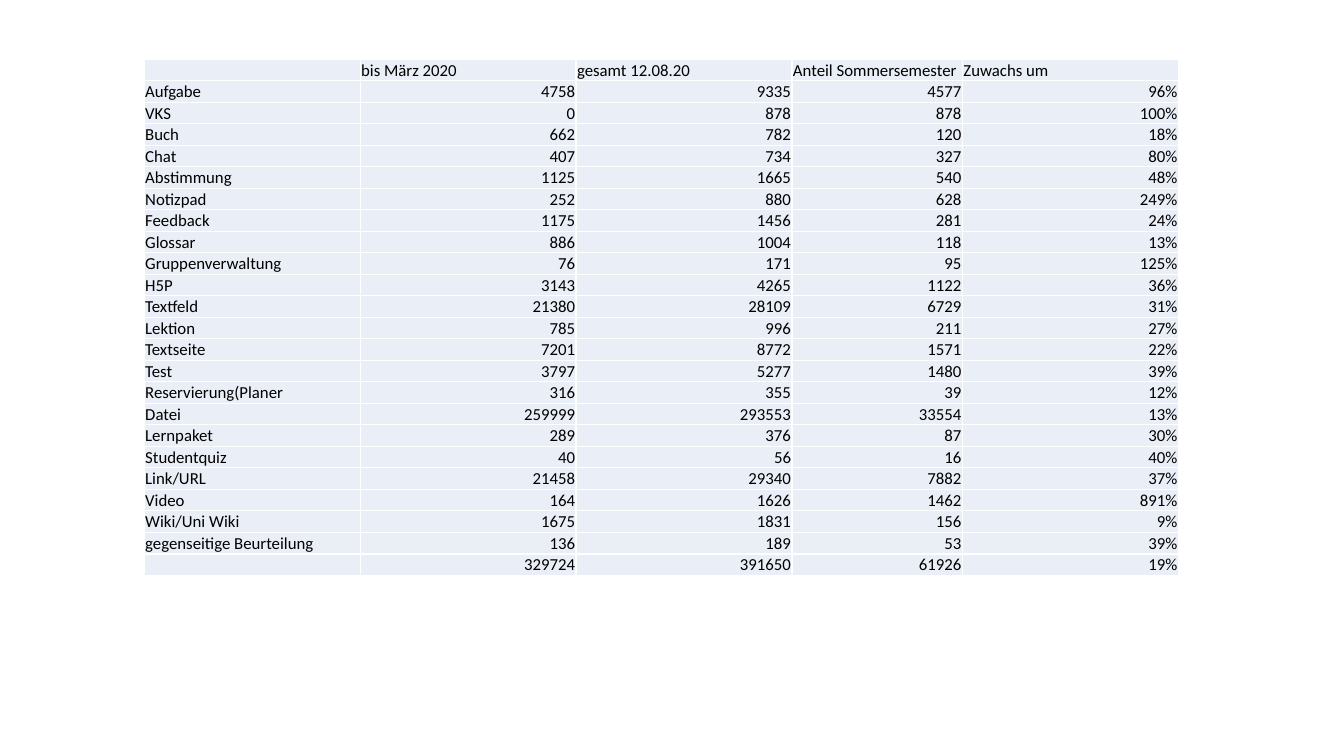
from typing import NamedTuple

from lxml import etree
from pptx import Presentation
from pptx import util as u
from pptx.dml.color import RGBColor
from pptx.enum import text
from pptx.oxml import ns
from pptx.table import _Cell

PALE = RGBColor(0xEA, 0xEF, 0xF7)
WHITE = RGBColor(0xFF, 0xFF, 0xFF)
BLACK = RGBColor(0, 0, 0)
FONT = "Calibri"
SIZE = 12
LEFT, TOP = 103, 42.3
WIDTHS = (154.25, 154.25, 154.25, 121.75, 154.25)
HEIGHT = 15.2
INSET = 0.72


class Usage(NamedTuple):
    name: str
    old: int
    total: int

    def texts(self) -> tuple[str, ...]:
        share = self.total - self.old
        growth = share / self.old if self.old else 1
        return self.name, str(self.old), str(self.total), str(share), f"{growth:.0%}"


HEADS = ("", "bis März 2020", "gesamt 12.08.20", "Anteil Sommersemester", "Zuwachs um")
TOOLS = [
    Usage("Aufgabe", 4758, 9335),
    Usage("VKS", 0, 878),
    Usage("Buch", 662, 782),
    Usage("Chat", 407, 734),
    Usage("Abstimmung", 1125, 1665),
    Usage("Notizpad", 252, 880),
    Usage("Feedback", 1175, 1456),
    Usage("Glossar", 886, 1004),
    Usage("Gruppenverwaltung", 76, 171),
    Usage("H5P", 3143, 4265),
    Usage("Textfeld", 21380, 28109),
    Usage("Lektion", 785, 996),
    Usage("Textseite", 7201, 8772),
    Usage("Test", 3797, 5277),
    Usage("Reservierung(Planer", 316, 355),
    Usage("Datei", 259999, 293553),
    Usage("Lernpaket", 289, 376),
    Usage("Studentquiz", 40, 56),
    Usage("Link/URL", 21458, 29340),
    Usage("Video", 164, 1626),
    Usage("Wiki/Uni Wiki", 1675, 1831),
    Usage("gegenseitige Beurteilung", 136, 189),
]
SUM = Usage("", sum(t.old for t in TOOLS), sum(t.total for t in TOOLS))


def add_edges(cell: _Cell, color: RGBColor, width: float) -> None:
    props = cell._tc.get_or_add_tcPr()
    for spot, side in enumerate(("lnL", "lnR", "lnT", "lnB")):
        line = etree.Element(ns.qn(f"a:{side}"), w=str(u.Pt(width)))
        fill = etree.SubElement(line, ns.qn("a:solidFill"))
        etree.SubElement(fill, ns.qn("a:srgbClr"), val=str(color))
        props.insert(spot, line)


def put_text(cell: _Cell, words: str, *, size: float = SIZE,
             color: RGBColor = BLACK, right: bool = False) -> None:
    para = cell.text_frame.paragraphs[0]
    para.alignment = text.PP_ALIGN.RIGHT if right else text.PP_ALIGN.LEFT
    if words:
        run = para.add_run()
        run.text = words
        run.font.name = FONT
        run.font.size = u.Pt(size)
        run.font.color.rgb = color
    else:
        etree.SubElement(para._p, ns.qn("a:endParaRPr"), sz=str(size * 100))


def style_cell(cell: _Cell) -> None:
    cell.fill.solid()
    cell.fill.fore_color.rgb = PALE
    cell.vertical_anchor = text.MSO_ANCHOR.BOTTOM
    cell.margin_left = cell.margin_right = cell.margin_top = u.Pt(INSET)
    cell.margin_bottom = u.Pt(0)
    add_edges(cell, WHITE, 1)


def main() -> None:
    deck = Presentation()
    deck.slide_width, deck.slide_height = u.Pt(960), u.Pt(540)
    slide = deck.slides.add_slide(deck.slide_layouts[6])
    lines = [HEADS, *(tool.texts() for tool in TOOLS), SUM.texts()]
    table = slide.shapes.add_table(
        len(lines), len(WIDTHS), u.Pt(LEFT), u.Pt(TOP),
        u.Pt(sum(WIDTHS)), u.Pt(HEIGHT * len(lines))).table
    table.first_row = table.horz_banding = False
    for col, width in zip(table.columns, WIDTHS):
        col.width = u.Pt(width)
    for r, line in enumerate(lines):
        table.rows[r].height = u.Pt(HEIGHT)
        for c, words in enumerate(line):
            cell = table.cell(r, c)
            style_cell(cell)
            put_text(cell, words, right=r > 0 and c > 0)
    deck.save("out.pptx")


if __name__ == "__main__":
    main()
